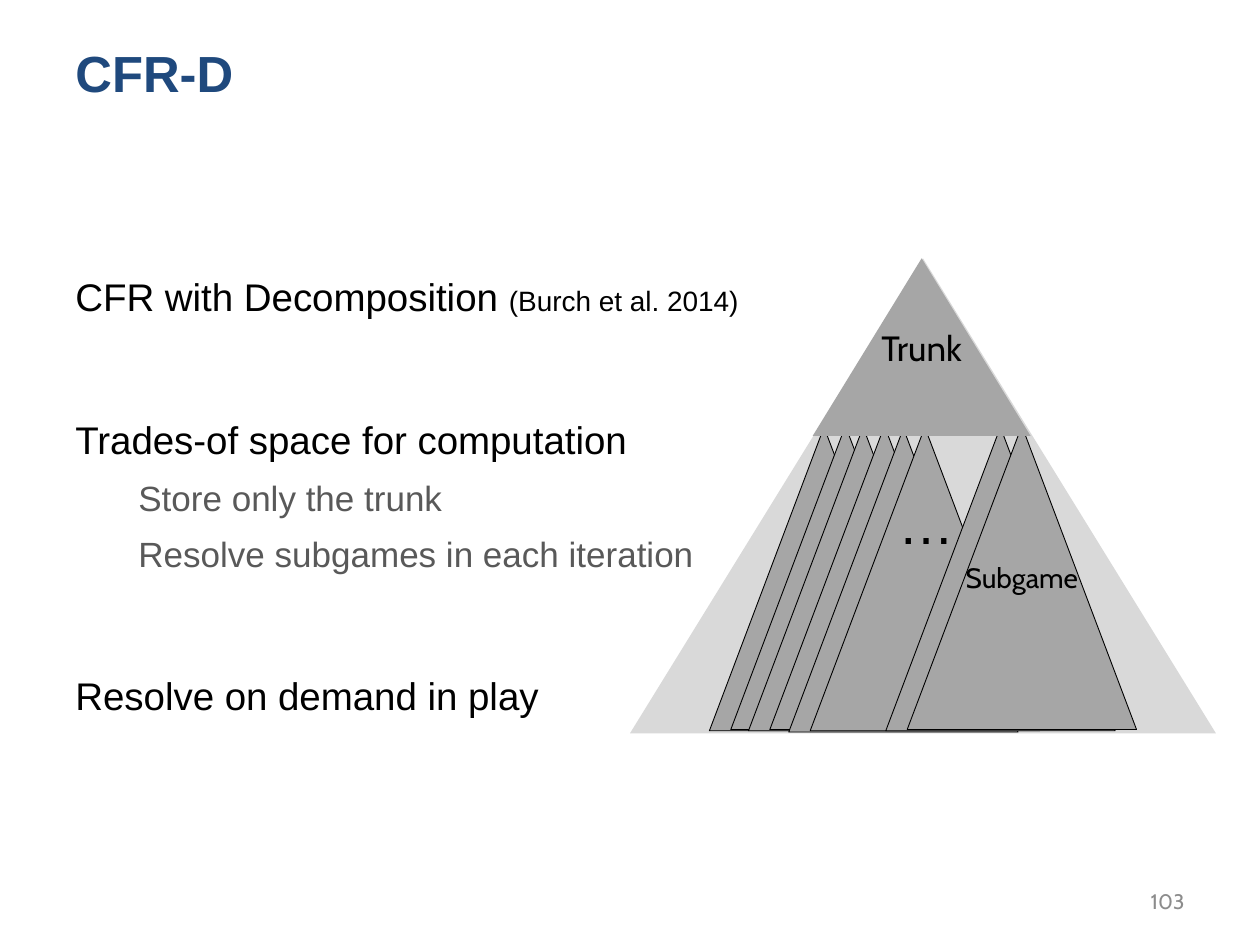
from pptx import Presentation
from pptx.dml.color import RGBColor
from pptx.enum.text import MSO_ANCHOR, PP_ALIGN
from pptx.util import Inches, Pt

MIDDLE = MSO_ANCHOR.MIDDLE
TOP = MSO_ANCHOR.TOP
LEFT, CENTER, RIGHT = PP_ALIGN.LEFT, PP_ALIGN.CENTER, PP_ALIGN.RIGHT

BLACK = RGBColor(0x00, 0x00, 0x00)
NAVY = RGBColor(0x1F, 0x49, 0x7D)
DARK_GRAY = RGBColor(0x59, 0x59, 0x59)
NUMBER_GRAY = RGBColor(0x8C, 0x8C, 0x8C)
MID_GRAY = RGBColor(0xA6, 0xA6, 0xA6)
LIGHT_GRAY = RGBColor(0xD9, 0xD9, 0xD9)

# Text, smaller citation, is detail, space before in points
BODY = [
    ("CFR with Decomposition ", "(Burch et al. 2014)", False, 0),
    ("Trades-of space for computation", "", False, 56),
    ("Store only the trunk", "", True, 8),
    ("Resolve subgames in each iteration", "", True, 8),
    ("Resolve on demand in play", "", False, 56),
]

# Left and top of each subgame triangle, from back to front
SUBGAMES = [(5.63, 3.39), (5.8, 3.38), (5.94, 3.39), (6.11, 3.38),
            (6.26, 3.4), (6.43, 3.39), (7.03, 3.39), (7.2, 3.38)]


def style(font, size, color, name="Arial", bold=False):
    font.name = name
    font.size = Pt(size)
    font.color.rgb = color
    font.bold = bold


def add_box(page, left, top, width, height, anchor=MIDDLE, wrap=True):
    box = page.shapes.add_textbox(Inches(left), Inches(top),
                                  Inches(width), Inches(height))
    frame = box.text_frame
    frame.word_wrap = wrap
    frame.vertical_anchor = anchor
    return frame


def write(frame, text, size, color, name="Arial", bold=False, align=LEFT):
    para = frame.paragraphs[0]
    para.text = text
    para.alignment = align
    style(para.font, size, color, name, bold)


def add_body(page):
    frame = add_box(page, 0.5, 1.15, 9, 5.55)
    frame.margin_bottom = Inches(0.03)
    for index, (text, citation, detail, space) in enumerate(BODY):
        para = frame.add_paragraph() if index else frame.paragraphs[0]
        if detail:
            para.level = 1
            properties = para._p.get_or_add_pPr()
            properties.set("marL", str(Inches(0.5)))
            properties.set("indent", "0")
        para.line_spacing = Pt(24 if detail else 26)
        para.space_before = Pt(space)
        style(para.font, 20 if detail else 22, DARK_GRAY if detail else BLACK)
        para.add_run().text = text
        if citation:
            span = para.add_run()
            span.text = citation
            span.font.size = Pt(16)


def add_triangle(page, left, top, width, height, fill, outlined=False):
    bottom = top + height
    corners = [(left + width / 2, top), (left + width, bottom)]
    builder = page.shapes.build_freeform(Inches(left), Inches(bottom))
    builder.add_line_segments([(Inches(x), Inches(y)) for x, y in corners])
    triangle = builder.convert_to_shape()
    triangle.shadow.inherit = False
    triangle.fill.solid()
    triangle.fill.fore_color.rgb = fill
    if outlined:
        triangle.line.color.rgb = BLACK
        triangle.line.width = Pt(0.5)
    else:
        triangle.line.fill.background()
    return triangle


def label(triangle, text, size):
    frame = triangle.text_frame
    frame.word_wrap = False
    frame.vertical_anchor = MIDDLE
    write(frame, text, size, BLACK, "Cabin", align=CENTER)


def add_game_tree(page):
    # Whole game
    add_triangle(page, 5, 2.05, 4.65, 3.77, LIGHT_GRAY)
    # Subgames, the front one labelled
    for left, top in SUBGAMES:
        subgame = add_triangle(page, left, top, 1.82, 2.41, MID_GRAY, True)
    label(subgame, "Subgame", 16)
    # Trunk covers the tips of the subgames
    trunk = add_triangle(page, 6.45, 2.05, 1.73, 1.41, MID_GRAY)
    label(trunk, "Trunk", 20)
    dots = add_box(page, 7.03, 3.83, 0.65, 0.64, TOP, False)
    write(dots, "…", 32, BLACK)


def main():
    deck = Presentation()
    deck.slide_width, deck.slide_height = Inches(10), Inches(7.5)
    page = deck.slides.add_slide(deck.slide_layouts[6])
    # Title, body and page number
    write(add_box(page, 0.5, 0.26, 8.52, 0.63), "CFR-D", 29, NAVY, bold=True)
    add_body(page)
    write(add_box(page, 7.17, 6.95, 2.33, 0.4), "103", 12, NUMBER_GRAY,
          "Cabin", align=RIGHT)
    # Diagram
    add_game_tree(page)
    deck.save("out.pptx")


if __name__ == "__main__":
    main()
